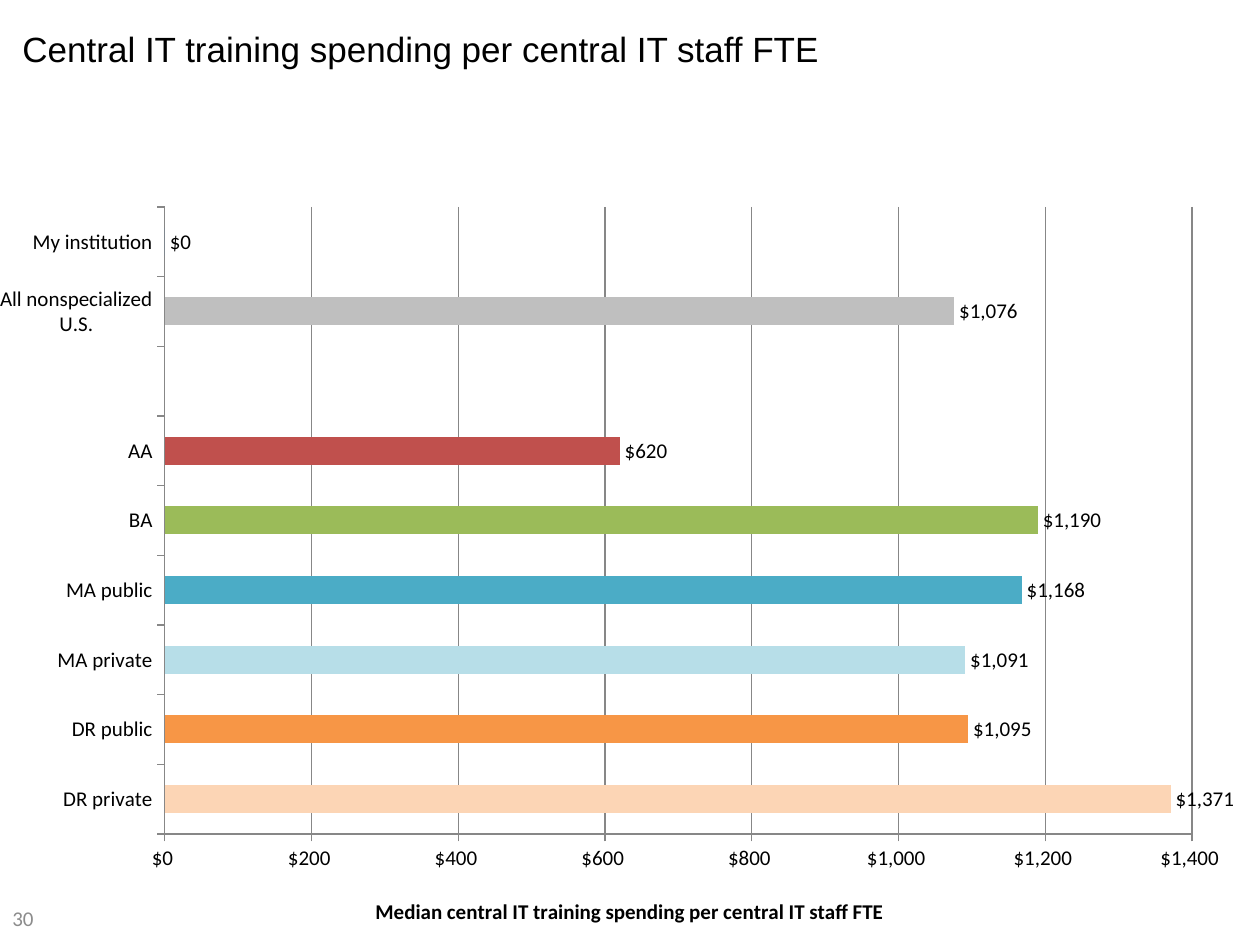
import pptx
import pptx.util
import pptx.dml.color
import pptx.chart.data
import pptx.enum.chart
import pptx.enum.text
import pptx.oxml

TITLE = "Central IT training spending per central IT staff FTE"
AXIS_TITLE = "Median central IT training spending per central IT staff FTE"
PAGE = "30"
BARS = [
    ("DR private", 1371, "FCD5B5"),
    ("DR public", 1095, "F79646"),
    ("MA private", 1091, "B7DEE8"),
    ("MA public", 1168, "4BACC6"),
    ("BA", 1190, "9BBB59"),
    ("AA", 620, "C0504D"),
    ("", None, None),
    ("All nonspecialized U.S.", 1076, "BFBFBF"),
    ("My institution", 0, "4F81BD"),
]
DOLLARS = '"$"#,##0_);[Red]\\("$"#,##0\\)'
LINE = "878787"
EMU_PER_PX = 914400 // 126
CHART_BOX = (0, 193, 1250, 752)
PLOT_BOX = (164, 207, 1028, 627)
AXIS_TITLE_AT = (371, 893)


def px(n):
    return pptx.util.Emu(round(n * 914400 / 126))


def rgb(value):
    return pptx.dml.color.RGBColor.from_string(value)


def style(font, size, color, name, bold=False):
    font.size = pptx.util.Pt(size)
    font.color.rgb = rgb(color)
    font.name = name
    font.bold = bold


def add_text(s, box, text, size, color, name, anchor):
    tf = s.shapes.add_textbox(*map(px, box)).text_frame
    tf.word_wrap = True
    tf.vertical_anchor = anchor
    p = tf.paragraphs[0]
    p.text = text
    style(p.font, size, color, name)


def layout(box, inner=False):
    left, top, width, height = CHART_BOX
    values = [(box[0] - left) / width, (box[1] - top) / height]
    values += [n / full for n, full in zip(box[2:], (width, height))]
    parts = '<c:layoutTarget val="inner"/>' if inner else ""
    parts += '<c:xMode val="edge"/><c:yMode val="edge"/>'
    parts += "".join(f'<c:{k} val="{v:.4f}"/>' for k, v in zip("xywh", values))
    return pptx.oxml.parse_xml(
        '<c:layout xmlns:c="http://schemas.openxmlformats.org/drawingml/2006/chart">'
        f"<c:manualLayout>{parts}</c:manualLayout></c:layout>"
    )


def set_layout(parent, new, index):
    for old in parent.findall(pptx.oxml.ns.qn("c:layout")):
        parent.remove(old)
    parent.insert(index, new)


def add_bars(s):
    data = pptx.chart.data.CategoryChartData(number_format=DOLLARS)
    data.categories = [name for name, _, _ in BARS]
    data.add_series("Series 1", [value for _, value, _ in BARS])
    kind = pptx.enum.chart.XL_CHART_TYPE.BAR_CLUSTERED
    chart = s.shapes.add_chart(kind, *map(px, CHART_BOX), data).chart
    chart.has_legend = False
    chart.has_title = False
    style(chart.font, 12, "000000", "Calibri")

    plot = chart.plots[0]
    plot.gap_width = 150
    plot.vary_by_categories = False
    series = plot.series[0]
    series.format.fill.solid()
    series.format.fill.fore_color.rgb = rgb("4F81BD")
    for i, (_, _, color) in enumerate(BARS):
        if color:
            fill = series.points[i].format.fill
            fill.solid()
            fill.fore_color.rgb = rgb(color)
    labels = series.data_labels
    labels.show_value = True
    labels.number_format = DOLLARS
    labels.number_format_is_linked = False
    labels.position = pptx.enum.chart.XL_LABEL_POSITION.OUTSIDE_END

    values = chart.value_axis
    for axis in (chart.category_axis, values):
        axis.major_tick_mark = pptx.enum.chart.XL_TICK_MARK.OUTSIDE
        axis.minor_tick_mark = pptx.enum.chart.XL_TICK_MARK.NONE
        axis.format.line.color.rgb = rgb(LINE)
    values.minimum_scale = 0
    values.maximum_scale = 1400
    values.major_unit = 200
    values.has_major_gridlines = True
    values.major_gridlines.format.line.color.rgb = rgb(LINE)
    values.tick_labels.number_format = DOLLARS
    values.tick_labels.number_format_is_linked = False
    title = values.axis_title
    p = title.text_frame.paragraphs[0]
    p.text = AXIS_TITLE
    style(p.font, 12, "000000", "Calibri", bold=True)

    set_layout(title._element, layout(AXIS_TITLE_AT), 1)
    set_layout(plot._element.getparent(), layout(PLOT_BOX, inner=True), 0)


prs = pptx.Presentation()
prs.slide_width, prs.slide_height = px(1260), px(945)
s = prs.slides.add_slide(prs.slide_layouts[6])
anchors = pptx.enum.text.MSO_ANCHOR
add_text(s, (10, 21, 1178, 126), TITLE, 20, "000000", "Arial", anchors.TOP)
add_bars(s)
add_text(s, (0, 892, 136, 53), PAGE, 12, "8C8C8C", "Calibri", anchors.MIDDLE)
prs.save("out.pptx")
